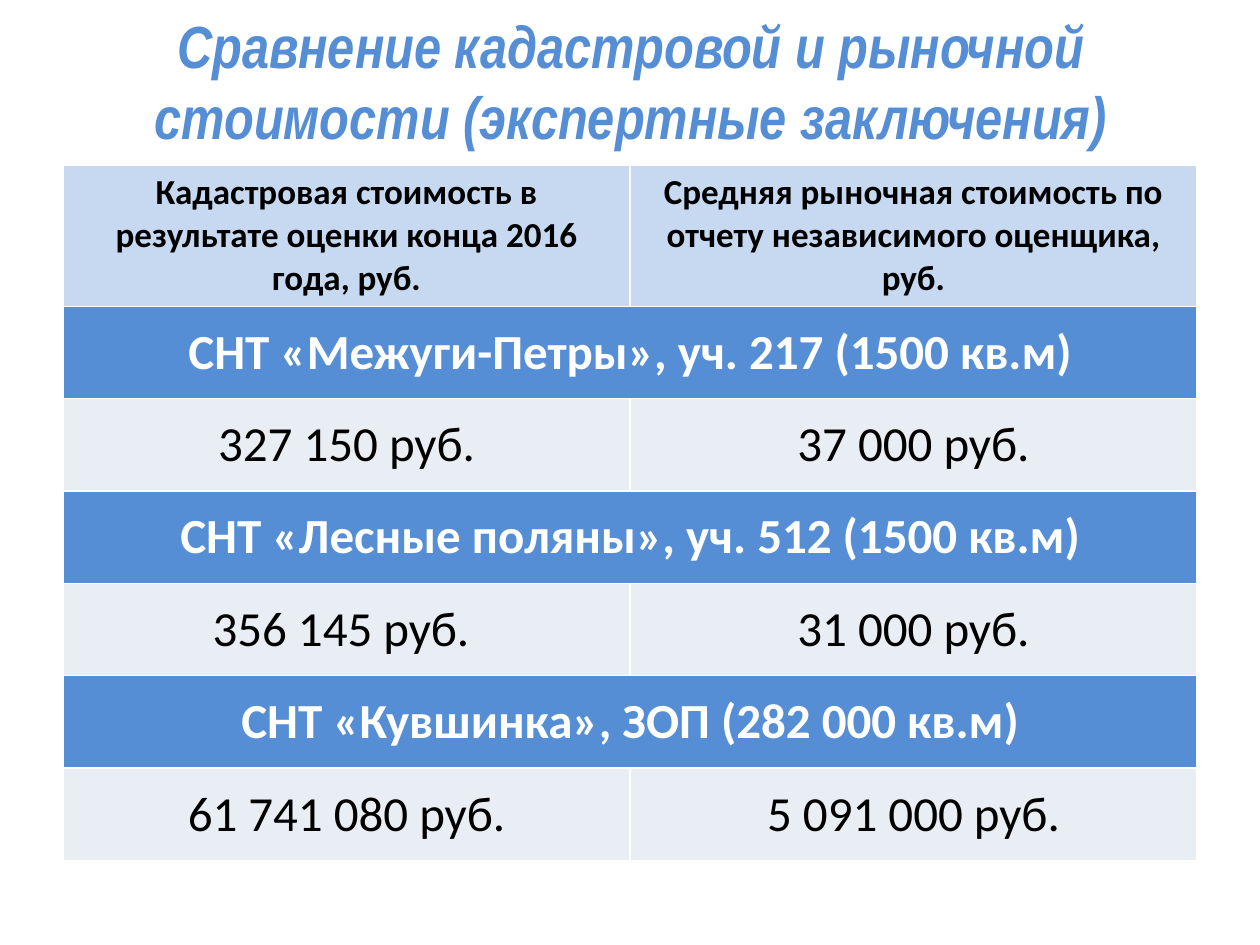
from dataclasses import dataclass

from pptx import Presentation
from pptx.dml.color import RGBColor
from pptx.enum.text import MSO_ANCHOR, MSO_AUTO_SIZE, PP_ALIGN
from pptx.util import Pt

CENTER = PP_ALIGN.CENTER
MIDDLE = MSO_ANCHOR.MIDDLE
NO_AUTOFIT = MSO_AUTO_SIZE.NONE
TITLE_ONLY_LAYOUT = 5


@dataclass(frozen=True)
class Theme:
    title_font: str = "Arial Narrow"
    table_font: str = "Calibri"
    title_size: int = 34
    header_size: int = 20
    body_size: int = 28
    accent: str = "558ED5"
    header_fill: str = "C6D9F1"
    value_fill: str = "E9EDF4"
    dark: str = "000000"
    light: str = "FFFFFF"


THEME = Theme()
TITLE = "Сравнение кадастровой и рыночной стоимости (экспертные заключения)"
HEADERS = (
    "Кадастровая стоимость в результате оценки конца 2016 года, руб.",
    "Средняя рыночная стоимость по отчету независимого оценщика, руб.",
)
PLOTS = (
    ("СНТ «Межуги-Петры», уч. 217 (1500 кв.м)", "327 150 руб.", "37 000 руб."),
    ("СНТ «Лесные поляны», уч. 512 (1500 кв.м)", "356 145 руб. ", "31 000 руб."),
    ("СНТ «Кувшинка», ЗОП (282 000 кв.м)", "61 741 080 руб.", "5 091 000 руб."),
)
HEADER_HEIGHT = 67.7
ROW_HEIGHT = 52.8


def write_text(text_frame, text, *, font, size, color, bold=False, italic=False):
    paragraph = text_frame.paragraphs[0]
    paragraph.alignment = CENTER
    run = paragraph.add_run()
    run.text = text
    run.font.name = font
    run.font.size = Pt(size)
    run.font.bold = bold
    run.font.italic = italic
    run.font.color.rgb = RGBColor.from_string(color)


def add_title(slide):
    title = slide.shapes.title
    title.left, title.top, title.width, title.height = Pt(36.7), Pt(9.4), Pt(648), Pt(72.7)
    text_frame = title.text_frame
    text_frame.word_wrap = True
    text_frame.auto_size = NO_AUTOFIT
    text_frame.vertical_anchor = MIDDLE
    write_text(text_frame, TITLE, font=THEME.title_font, size=THEME.title_size,
               color=THEME.accent, bold=True, italic=True)


def fill_cell(cell, text, *, fill, **text_format):
    cell.fill.solid()
    cell.fill.fore_color.rgb = RGBColor.from_string(fill)
    cell.vertical_anchor = MIDDLE
    write_text(cell.text_frame, text, font=THEME.table_font, **text_format)


def add_value_table(slide):
    row_count = 1 + 2 * len(PLOTS)
    height = HEADER_HEIGHT + ROW_HEIGHT * (row_count - 1)
    table = slide.shapes.add_table(row_count, len(HEADERS), Pt(36), Pt(94.3),
                                   Pt(648), Pt(height)).table
    for index, row in enumerate(table.rows):
        row.height = Pt(ROW_HEIGHT if index else HEADER_HEIGHT)

    for column, header in enumerate(HEADERS):
        fill_cell(table.cell(0, column), header, fill=THEME.header_fill,
                  size=THEME.header_size, color=THEME.dark, bold=True)

    for index, (plot, *values) in enumerate(PLOTS):
        plot_row = 1 + 2 * index
        plot_cell = table.cell(plot_row, 0)
        plot_cell.merge(table.cell(plot_row, len(HEADERS) - 1))
        fill_cell(plot_cell, plot, fill=THEME.accent,
                  size=THEME.body_size, color=THEME.light, bold=True)
        for column, value in enumerate(values):
            fill_cell(table.cell(plot_row + 1, column), value, fill=THEME.value_fill,
                      size=THEME.body_size, color=THEME.dark)


def main():
    presentation = Presentation()
    presentation.slide_width, presentation.slide_height = Pt(720), Pt(540)
    slide = presentation.slides.add_slide(presentation.slide_layouts[TITLE_ONLY_LAYOUT])
    add_title(slide)
    add_value_table(slide)
    presentation.save("out.pptx")


if __name__ == "__main__":
    main()
